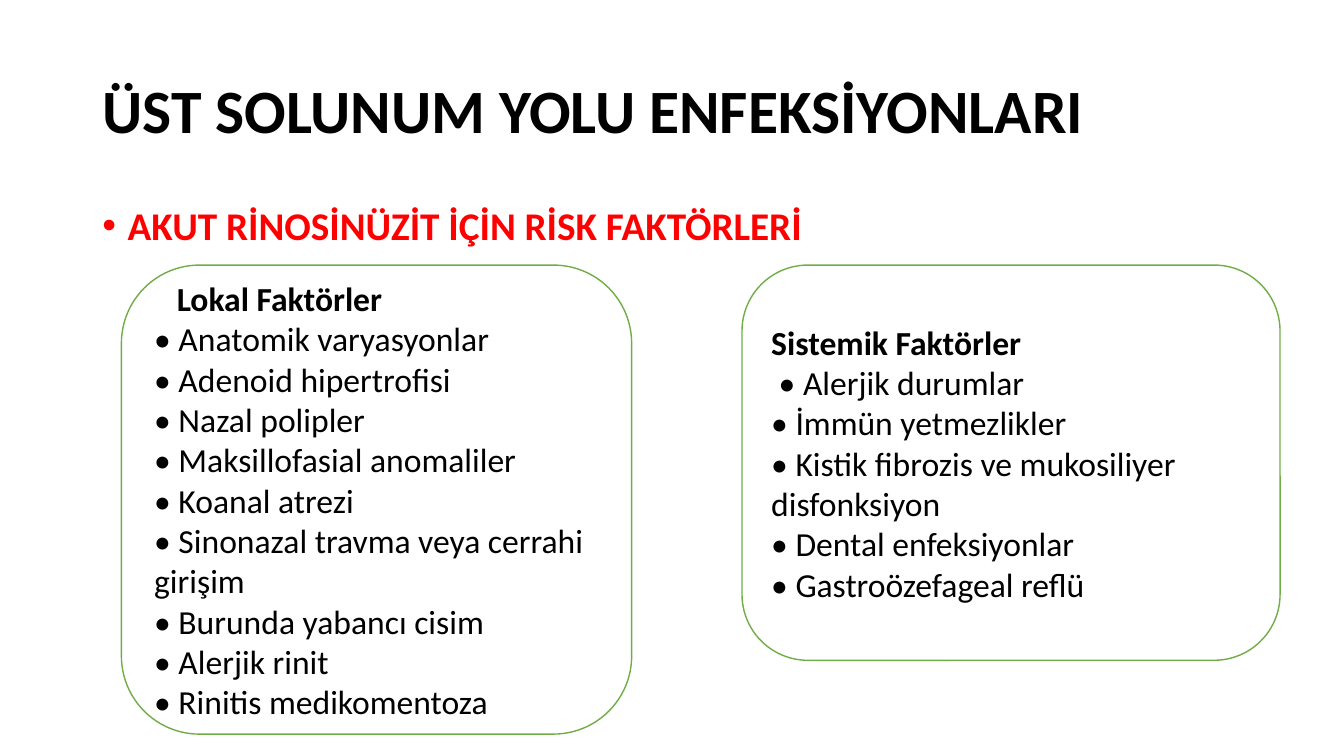
import pptx
import pptx.dml.color
import pptx.enum.shapes
import pptx.enum.text
import pptx.oxml
import pptx.oxml.ns
import pptx.util

Cm = pptx.util.Cm
Pt = pptx.util.Pt

COLOURS = {"text": "000000", "accent": "FF0000", "fill": "FFFFFF", "line": "70AD47"}

LOCAL_FACTORS = [
    "Anatomik varyasyonlar",
    "Adenoid hipertrofisi",
    "Nazal polipler",
    "Maksillofasial anomaliler",
    "Koanal atrezi",
    "Sinonazal travma veya cerrahi girişim",
    "Burunda yabancı cisim",
    "Alerjik rinit",
    "Rinitis medikomentoza",
]
SYSTEMIC_FACTORS = [
    "Alerjik durumlar",
    "İmmün yetmezlikler",
    "Kistik fibrozis ve mukosiliyer disfonksiyon",
    "Dental enfeksiyonlar",
    "Gastroözefageal reflü",
]


class Slide:
    """Holds the current page and its text style."""

    font = "Calibri"

    def __init__(self, page):
        self.page = page

    def colour(self, name):
        return pptx.dml.color.RGBColor.from_string(COLOURS[name])

    def style(self, para, size, colour="text", bold=False):
        para.alignment = pptx.enum.text.PP_ALIGN.LEFT
        for span in para.runs:
            span.font.name = self.font
            span.font.size = Pt(size)
            span.font.bold = bold
            span.font.color.rgb = self.colour(colour)

    def indent(self, para, margin, first_line=0):
        properties = para._p.get_or_add_pPr()
        properties.set("marL", str(Cm(margin)))
        properties.set("indent", str(Cm(first_line)))
        return properties

    def heading(self, text, top, height, size, colour="text", middle=False):
        box = self.page.shapes.add_textbox(Cm(2.33), Cm(top), Cm(29.21), Cm(height))
        frame = box.text_frame
        frame.word_wrap = True
        if middle:
            frame.vertical_anchor = pptx.enum.text.MSO_ANCHOR.MIDDLE
        frame.text = text
        para = frame.paragraphs[0]
        para.line_spacing = 0.9
        self.style(para, size, colour, bold=True)
        return para

    def bullet_heading(self, text, top, height, size, colour):
        para = self.heading(text, top, height, size, colour)
        properties = self.indent(para, 0.64, -0.64)
        namespace = pptx.oxml.ns.nsdecls("a")
        for element in ('<a:buFont {} typeface="Arial"/>', '<a:buChar {} char="•"/>'):
            properties.append(pptx.oxml.parse_xml(element.format(namespace)))

    def factor_card(self, title, factors, left, width, height, indents):
        """Draws a rounded card; indents maps a paragraph number to its first-line indent."""
        card = self.page.shapes.add_shape(
            pptx.enum.shapes.MSO_SHAPE.ROUNDED_RECTANGLE,
            Cm(left), Cm(6.68), Cm(width), Cm(height))
        card.shadow.inherit = False
        card.fill.solid()
        card.fill.fore_color.rgb = self.colour("fill")
        card.line.color.rgb = self.colour("line")
        card.line.width = Pt(1)
        frame = card.text_frame
        frame.word_wrap = True
        frame.vertical_anchor = pptx.enum.text.MSO_ANCHOR.MIDDLE
        frame.text = "\n".join([title] + [f"• {factor}" for factor in factors])
        for number, para in enumerate(frame.paragraphs):
            self.style(para, 24, bold=number == 0)
            if number in indents:
                self.indent(para, 0, indents[number])


def main():
    deck = pptx.Presentation()
    deck.slide_width, deck.slide_height = Cm(33.87), Cm(19.05)
    slide = Slide(deck.slides.add_slide(deck.slide_layouts[6]))
    slide.heading("ÜST SOLUNUM YOLU ENFEKSİYONLARI", 1.01, 3.68, 44, middle=True)
    slide.bullet_heading("AKUT RİNOSİNÜZİT İÇİN RİSK FAKTÖRLERİ", 5.07, 12.09, 28, "accent")
    slide.factor_card("Lokal Faktörler", LOCAL_FACTORS, 3.06, 12.86, 11.82, {0: 0.57})
    slide.factor_card("Sistemik Faktörler", SYSTEMIC_FACTORS, 18.7, 13.56, 9.96, {1: 0.19})
    deck.save("out.pptx")


if __name__ == "__main__":
    main()
